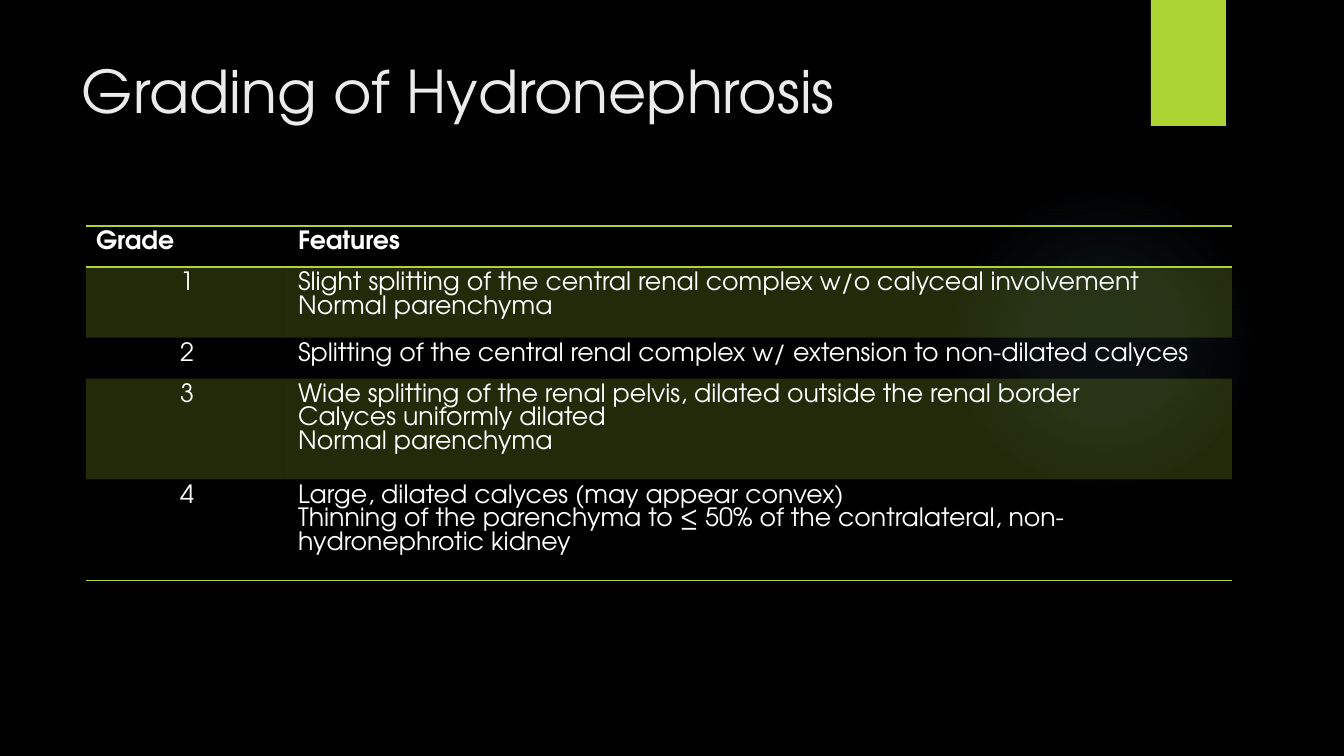
"""Build the hydronephrosis grading slide."""
from lxml import etree
from pptx import Presentation
from pptx.dml.color import RGBColor
from pptx.enum.shapes import MSO_SHAPE
from pptx.enum.text import PP_ALIGN
from pptx.oxml import parse_xml
from pptx.oxml.ns import nsdecls, qn
from pptx.util import Emu, Pt

LEFT, CENTER = PP_ALIGN.LEFT, PP_ALIGN.CENTER
RECTANGLE, OVAL = MSO_SHAPE.RECTANGLE, MSO_SHAPE.OVAL
FONT = "TeX Gyre Adventor"
BLACK, WHITE, TITLE_GRAY = "000000", "FFFFFF", "EBEBEB"
LIME, GLOW_BLUE = "ACD433", "7AC4F0"
NO_GRID_STYLE = "{2D5ABB26-0587-4C30-8999-92F81FD0307C}"

TITLE = "Grading of Hydronephrosis"
HEADER = ("Grade", "Features")
GRADES = [
    ("1", ["Slight splitting of the central renal complex w/o calyceal involvement",
           "Normal parenchyma"]),
    ("2", ["Splitting of the central renal complex w/ extension to non-dilated calyces"]),
    ("3", ["Wide splitting of the renal pelvis, dilated outside the renal border",
           "Calyces uniformly dilated",
           "Normal parenchyma"]),
    ("4", ["Large, dilated calyces (may appear convex)",
           "Thinning of the parenchyma to ≤ 50% of the contralateral, "
           "non-hydronephrotic kidney"]),
]
COLUMN_WIDTHS = [202, 944]
ROW_HEIGHTS = [41, 57, 41, 80, 80]
GLOW_STOPS = [(0, 7), (36, 6), (69, 0)]


def px(length):
    """Turn pixels into EMU."""
    return Emu(round(length * 914400 / 100.8))


def color(value):
    """Turn a hex string into a colour."""
    return RGBColor.from_string(value)


def write(frame, lines, size=18, fill=WHITE, bold=False, align=LEFT):
    """Write one paragraph per line into a text frame."""
    frame.word_wrap = True
    for index, line in enumerate(lines):
        paragraph = frame.add_paragraph() if index else frame.paragraphs[0]
        paragraph.alignment = align
        run = paragraph.add_run()
        run.text = line
        run.font.name = FONT
        run.font.size = Pt(size)
        run.font.bold = bold
        run.font.color.rgb = color(fill)


def add_shape(slide, kind, left, top, width, height, fill):
    """Add a plain filled shape without line or shadow."""
    shape = slide.shapes.add_shape(kind, px(left), px(top), px(width), px(height))
    shape.shadow.inherit = False
    shape.line.fill.background()
    shape.fill.solid()
    shape.fill.fore_color.rgb = color(fill)
    return shape


def set_glow(shape):
    """Replace the solid fill by a transparent radial gradient."""
    stops = "".join(
        f'<a:gs pos="{position * 1000}"><a:srgbClr val="{GLOW_BLUE}">'
        f'<a:alpha val="{alpha * 1000}"/></a:srgbClr></a:gs>'
        for position, alpha in GLOW_STOPS)
    gradient = parse_xml(
        f'<a:gradFill {nsdecls("a")}><a:gsLst>{stops}</a:gsLst><a:path path="circle">'
        '<a:fillToRect l="50000" t="50000" r="50000" b="50000"/></a:path></a:gradFill>')
    properties = shape.element.spPr
    properties.replace(properties.find(qn("a:solidFill")), gradient)


def set_fill(cell, banded):
    """Give a cell a translucent lime band or no fill."""
    if not banded:
        cell.fill.background()
        return
    cell.fill.solid()
    cell.fill.fore_color.rgb = color(LIME)
    lime = next(cell._tc.tcPr.iter(qn("a:srgbClr")))
    etree.SubElement(lime, qn("a:alpha"), val="20000")


def set_borders(cell, sides):
    """Draw lime lines on the given sides of a cell."""
    properties = cell._tc.get_or_add_tcPr()
    for index, side in enumerate(sides):
        properties.insert(index, parse_xml(
            f'<a:ln{side} {nsdecls("a")} w="12700"><a:solidFill>'
            f'<a:srgbClr val="{LIME}"/></a:solidFill></a:ln{side}>'))


def add_grade_table(slide):
    """Add the table of grades and their features."""
    rows = [(HEADER[0], [HEADER[1]])] + GRADES
    frame = slide.shapes.add_table(
        len(rows), len(COLUMN_WIDTHS), px(86), px(226),
        px(sum(COLUMN_WIDTHS)), px(sum(ROW_HEIGHTS)))
    table = frame.table
    next(frame.element.iter(qn("a:tableStyleId"))).text = NO_GRID_STYLE
    for column, width in zip(table.columns, COLUMN_WIDTHS):
        column.width = px(width)
    for index, (grade, features) in enumerate(rows):
        table.rows[index].height = px(ROW_HEIGHTS[index])
        is_header = index == 0
        sides = "TB" if is_header else "B" if index == len(rows) - 1 else ""
        for column, lines in enumerate(([grade], features)):
            cell = table.cell(index, column)
            centered = column == 0 and not is_header
            write(cell.text_frame, lines, bold=is_header,
                  align=CENTER if centered else LEFT)
            set_fill(cell, banded=index % 2 == 1)
            set_borders(cell, sides)


def main():
    """Build and save the slide."""
    presentation = Presentation()
    presentation.slide_width, presentation.slide_height = px(1344), px(756)
    slide = presentation.slides.add_slide(presentation.slide_layouts[6])
    slide.background.fill.solid()
    slide.background.fill.fore_color.rgb = color(BLACK)
    set_glow(add_shape(slide, OVAL, 949, 184, 310, 310, GLOW_BLUE))
    add_shape(slide, RECTANGLE, 1151, 0, 75, 126, LIME)
    title = slide.shapes.add_textbox(px(72), px(50), px(1037), px(154))
    write(title.text_frame, [TITLE], size=42, fill=TITLE_GRAY)
    add_grade_table(slide)
    presentation.save("out.pptx")


if __name__ == "__main__":
    main()
